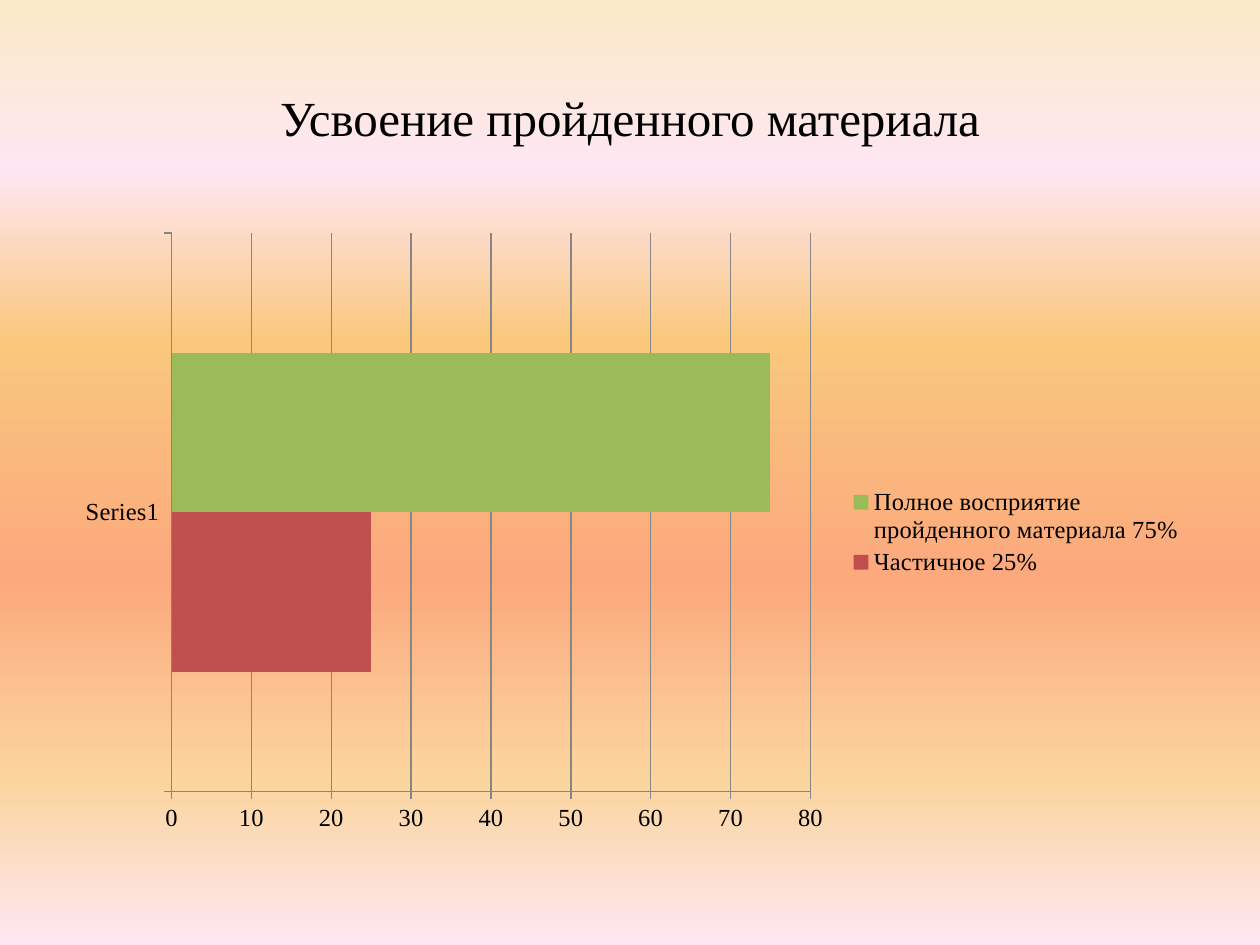
import copy

import pptx
import pptx.chart.data
import pptx.dml.color
import pptx.enum.chart
import pptx.enum.text
import pptx.util
from pptx.util import Inches

TITLE = "Усвоение пройденного материала"
CATEGORIES = ["Series1"]
RESULTS = [
    ("Частичное 25%", 25, "C0504D"),
    ("Полное восприятие пройденного материала 75%", 75, "9BBB59"),
]
BACKGROUND_STOPS = [
    (0, "FBEAC7"), (18, "FEE7F2"), (36, "FAC77D"),
    (61, "FBA97D"), (82, "FBD49C"), (100, "FEE7F2"),
]
FONT = "Times New Roman"
BLACK = "000000"
GREY = "868686"


def rgb(code):
    return pptx.dml.color.RGBColor.from_string(code)


def format_font(font, size, color=BLACK):
    font.name = FONT
    font.size = pptx.util.Pt(size)
    font.bold = False
    font.color.rgb = rgb(color)


def write_text(frame, text, size, color=BLACK,
               align=pptx.enum.text.PP_ALIGN.CENTER,
               anchor=pptx.enum.text.MSO_ANCHOR.MIDDLE):
    frame.word_wrap = True
    frame.vertical_anchor = anchor
    paragraph = frame.paragraphs[0]
    paragraph.alignment = align
    run = paragraph.add_run()
    run.text = text
    format_font(run.font, size, color)


def paint_background(slide, stops):
    """Fill the slide with a gradient running from top to bottom."""
    fill = slide.background.fill
    fill.gradient()
    fill.gradient_angle = 270
    stop_list = fill.gradient_stops[0]._gs.getparent()
    for _ in range(len(stops) - len(fill.gradient_stops)):
        stop_list.append(copy.deepcopy(stop_list[0]))
    for stop, (percent, color) in zip(fill.gradient_stops, stops):
        stop.position = percent / 100
        stop.color.rgb = rgb(color)


def format_axis(axis, gridlines):
    axis.has_major_gridlines = gridlines
    axis.major_tick_mark = pptx.enum.chart.XL_TICK_MARK.OUTSIDE
    axis.minor_tick_mark = pptx.enum.chart.XL_TICK_MARK.NONE
    format_font(axis.tick_labels.font, 14)
    lines = [axis.format.line]
    if gridlines:
        lines.append(axis.major_gridlines.format.line)
    for line in lines:
        line.color.rgb = rgb(GREY)
        line.width = pptx.util.Pt(0.75)


def add_results_chart(slide):
    chart_data = pptx.chart.data.CategoryChartData()
    chart_data.categories = CATEGORIES
    for name, percent, _ in RESULTS:
        chart_data.add_series(name, [percent])
    chart = slide.shapes.add_chart(
        pptx.enum.chart.XL_CHART_TYPE.BAR_CLUSTERED,
        Inches(0.5), Inches(1.75), Inches(9), Inches(4.95), chart_data,
    ).chart
    chart.has_title = False
    chart.font.name = "Calibri"
    chart.font.size = pptx.util.Pt(10)

    bars = chart.plots[0]
    bars.gap_width = 150
    bars.vary_by_categories = False
    for series, (_, _, color) in zip(bars.series, RESULTS):
        series.format.fill.solid()
        series.format.fill.fore_color.rgb = rgb(color)

    format_axis(chart.category_axis, gridlines=False)
    format_axis(chart.value_axis, gridlines=True)

    chart.has_legend = True
    chart.legend.position = pptx.enum.chart.XL_LEGEND_POSITION.RIGHT
    chart.legend.include_in_layout = False
    format_font(chart.legend.font, 14)


def main():
    deck = pptx.Presentation()
    deck.slide_width, deck.slide_height = Inches(10), Inches(7.5)
    slide = deck.slides.add_slide(deck.slide_layouts.get_by_name("Title Only"))
    paint_background(slide, BACKGROUND_STOPS)

    title = slide.shapes.title
    title.left, title.top = Inches(0.5), Inches(0.3)
    title.width, title.height = Inches(9), Inches(1.25)
    write_text(title.text_frame, TITLE, size=28)

    add_results_chart(slide)
    deck.save("out.pptx")


if __name__ == "__main__":
    main()
